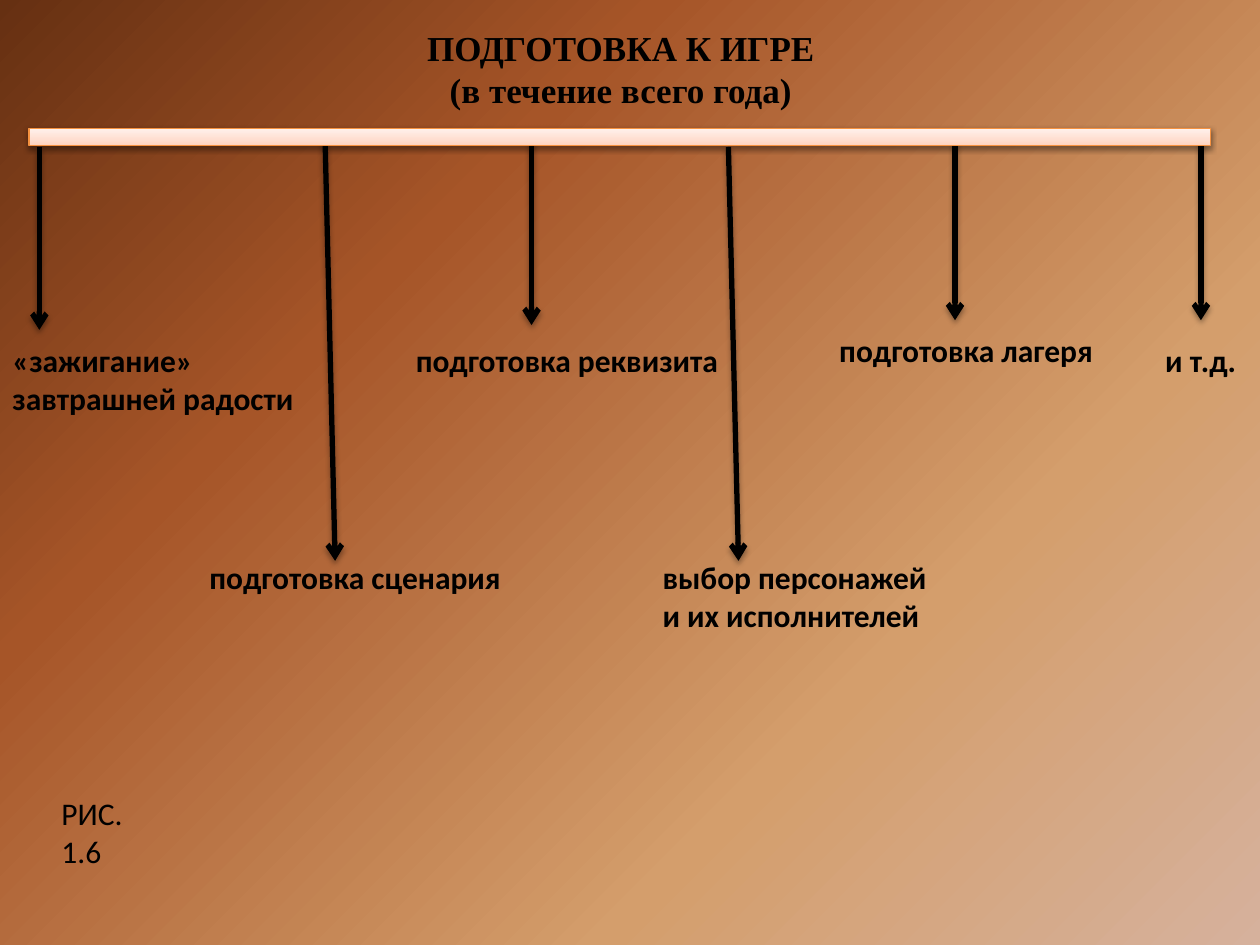
from lxml import etree
from pptx import Presentation
from pptx.dml.color import RGBColor
from pptx.enum.shapes import MSO_CONNECTOR, MSO_SHAPE
from pptx.enum.text import MSO_ANCHOR, MSO_AUTO_SIZE, PP_ALIGN
from pptx.oxml.ns import qn
from pptx.util import Pt

STRAIGHT = MSO_CONNECTOR.STRAIGHT
RECTANGLE = MSO_SHAPE.RECTANGLE
TOP = MSO_ANCHOR.TOP
CENTER = PP_ALIGN.CENTER
LEFT = PP_ALIGN.LEFT
NO_RESIZE = MSO_AUTO_SIZE.NONE
TITLE_ONLY = 5

BACKGROUND = [(0, "D6B19C"), (30, "D49E6C"), (70, "A65528"), (100, "663012")]
BAR_FILL = [(0, "FFD2BD"), (35, "FFDED0"), (100, "FFF2ED")]
ARROWS = [
    (22.5, 84, 22.5, 188.5),
    (185.75, 78.5, 191.5, 320.5),
    (303.75, 78.5, 303.75, 185.75),
    (416.25, 84, 422, 320.5),
    (545.75, 78.5, 545.75, 183),
    (686.25, 78.5, 686.25, 183),
]
STEPS = [
    (["«зажигание»", "завтрашней радости"], 0, 191.5, 176.5),
    (["подготовка сценария"], 112.5, 315.5, 183.5),
    (["подготовка реквизита"], 230.5, 191.5, 188.5),
    (["выбор персонажей", "и их исполнителей"], 371.5, 315.5, 168),
    (["подготовка лагеря"], 472.5, 185.75, 160),
    (["и т.д."], 658.75, 191.5, 61.25),
]


def color(value):
    """Turn a hex string into a colour."""
    return RGBColor.from_string(value)


def add_node(parent, tag, **attributes):
    """Append a drawing element with the given attributes."""
    node = etree.SubElement(parent, qn(tag))
    for name, value in attributes.items():
        node.set(name, str(value))
    return node


class Diagram:
    """Hold the style and the current slide."""

    ink = "000000"
    body_font = "Calibri"
    title_font = "Times New Roman"

    def __init__(self, slide):
        """Start drawing on a slide."""
        self.slide = slide

    def gradient(self, fill, owner, stops):
        """Give a fill its gradient stops and return its element."""
        fill.gradient()
        gradient = owner.find(".//" + qn("a:gradFill"))
        stop_list = gradient.find(qn("a:gsLst"))
        for default in list(stop_list):
            stop_list.remove(default)
        for position, value in stops:
            stop = add_node(stop_list, "a:gs", pos=position * 1000)
            add_node(stop, "a:srgbClr", val=value)
        return gradient

    def shadow(self, shape, opacity, distance):
        """Cast a soft shadow straight down."""
        effects = add_node(shape._element.spPr, "a:effectLst")
        outer = add_node(effects, "a:outerShdw", blurRad=Pt(3.1), dist=Pt(distance),
                         dir=5400000, rotWithShape=0)
        tint = add_node(outer, "a:srgbClr", val=self.ink)
        add_node(tint, "a:alpha", val=opacity * 1000)

    def background(self, stops):
        """Fill the slide with a gradient spreading from the lower right corner."""
        gradient = self.gradient(self.slide.background.fill, self.slide._element, stops)
        gradient.remove(gradient.find(qn("a:lin")))
        spread = add_node(gradient, "a:path", path="circle")
        add_node(spread, "a:fillToRect", l=100000, t=100000)

    def add_lines(self, frame, lines, size, font, bold, align):
        """Put lines into one paragraph of a text frame."""
        paragraph = frame.paragraphs[0]
        paragraph.alignment = align
        for number, line in enumerate(lines):
            if number:
                paragraph.add_line_break()
            run = paragraph.add_run()
            run.text = line
            run.font.size = Pt(size)
            run.font.name = font
            run.font.bold = bold
            run.font.color.rgb = color(self.ink)

    def title(self, lines, left, top, width, height):
        """Place and format the slide title."""
        heading = self.slide.shapes.title
        heading.left, heading.top = Pt(left), Pt(top)
        heading.width, heading.height = Pt(width), Pt(height)
        frame = heading.text_frame
        frame.word_wrap = False
        frame.auto_size = NO_RESIZE
        frame.vertical_anchor = TOP
        self.add_lines(frame, lines, 20, self.title_font, True, CENTER)

    def label(self, lines, left, top, width, bold=True, wrap=False):
        """Add a text label as tall as its lines."""
        height = 7 + 22 * len(lines)
        box = self.slide.shapes.add_textbox(Pt(left), Pt(top), Pt(width), Pt(height))
        box.text_frame.word_wrap = wrap
        self.add_lines(box.text_frame, lines, 18, self.body_font, bold, LEFT)

    def arrow(self, *ends):
        """Draw an arrow between two points."""
        arrow = self.slide.shapes.add_connector(STRAIGHT, *map(Pt, ends))
        arrow.line.color.rgb = color(self.ink)
        arrow.line.width = Pt(3)
        add_node(arrow._element.spPr.find(qn("a:ln")), "a:tailEnd", type="arrow")
        self.shadow(arrow, 35, 1.8)

    def bar(self, left, top, width, height):
        """Draw the bar from which the arrows hang."""
        bar = self.slide.shapes.add_shape(RECTANGLE, Pt(left), Pt(top), Pt(width), Pt(height))
        self.gradient(bar.fill, bar._element, BAR_FILL)
        bar.fill.gradient_angle = 90
        bar.line.color.rgb = color("F69240")
        bar.line.width = Pt(0.75)
        self.shadow(bar, 38, 1.6)


def main():
    """Build the slide and save it."""
    deck = Presentation()
    deck.slide_width, deck.slide_height = Pt(720), Pt(540)
    diagram = Diagram(deck.slides.add_slide(deck.slide_layouts[TITLE_ONLY]))
    diagram.background(BACKGROUND)
    diagram.title(["ПОДГОТОВКА К ИГРЕ", "(в течение всего года)"], 236, 11.5, 237.5, 80)
    for ends in ARROWS:
        diagram.arrow(*ends)
    for step in STEPS:
        diagram.label(*step)
    diagram.label(["РИС.", "1.6"], 28, 450, 62, bold=False, wrap=True)
    diagram.bar(16.5, 73.25, 675.25, 10)
    deck.save("out.pptx")


if __name__ == "__main__":
    main()
